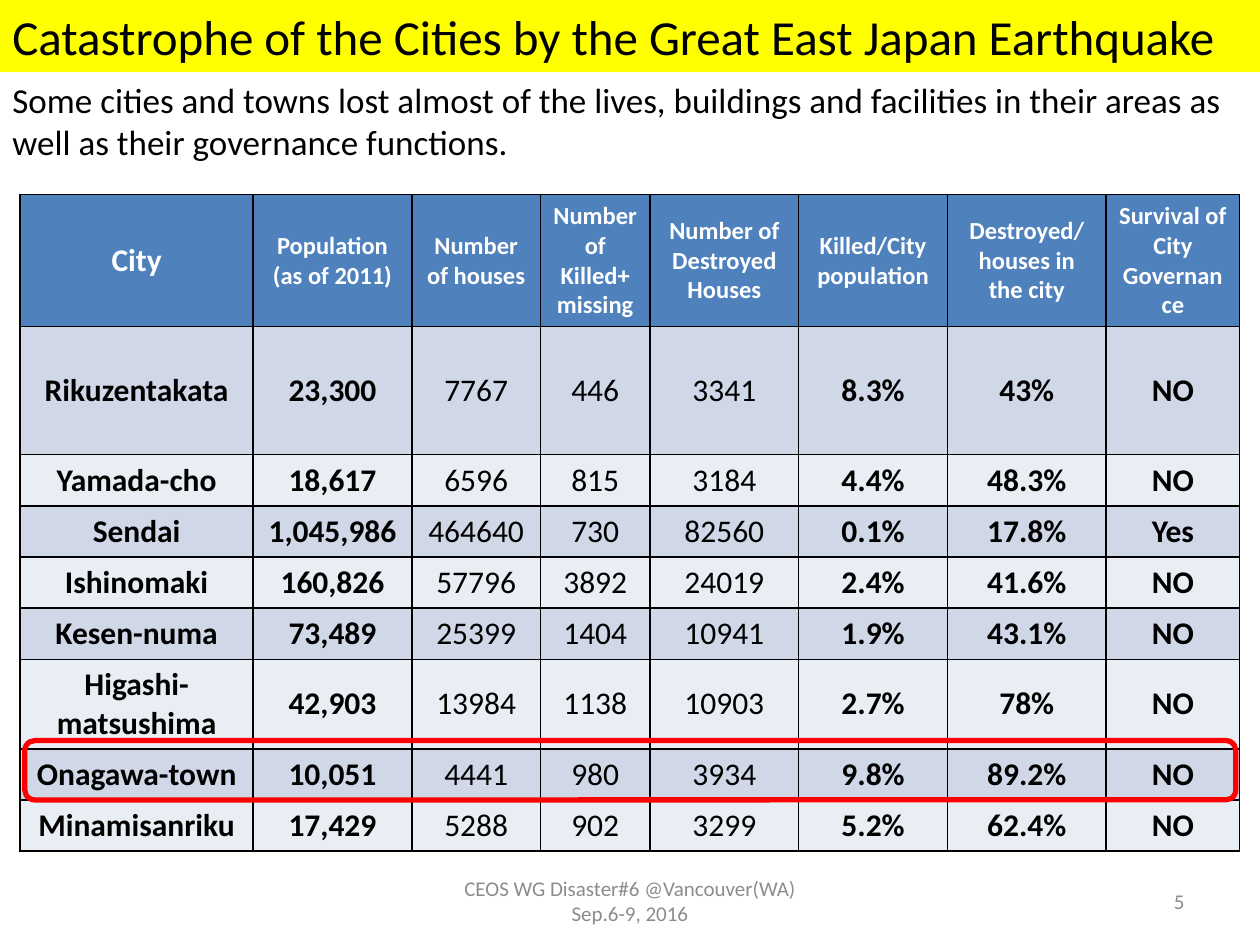
from lxml import etree
from pptx import Presentation
from pptx.dml.color import RGBColor
from pptx.enum.shapes import MSO_SHAPE
from pptx.enum.text import MSO_ANCHOR, PP_ALIGN
from pptx.oxml.ns import qn
from pptx.util import Pt

LEFT, CENTER, RIGHT = PP_ALIGN.LEFT, PP_ALIGN.CENTER, PP_ALIGN.RIGHT
TOP, MIDDLE = MSO_ANCHOR.TOP, MSO_ANCHOR.MIDDLE
RECTANGLE, ROUNDED = MSO_SHAPE.RECTANGLE, MSO_SHAPE.ROUNDED_RECTANGLE

BLACK = RGBColor(0x00, 0x00, 0x00)
WHITE = RGBColor(0xFF, 0xFF, 0xFF)
YELLOW = RGBColor(0xFF, 0xFF, 0x00)
RED = RGBColor(0xFF, 0x00, 0x00)
GRAY = RGBColor(0x8C, 0x8C, 0x8C)
HEADER_BLUE = RGBColor(0x4F, 0x81, 0xBD)
BANDS = (RGBColor(0xD0, 0xD8, 0xE8), RGBColor(0xE9, 0xED, 0xF4))
FONT = "Calibri"

HEADERS = (
    "City", "Population (as of 2011)", "Number of houses",
    "Number of Killed+missing", "Number of Destroyed Houses",
    "Killed/City population", "Destroyed/ houses in the city",
    "Survival of City Governance",
)
CITIES = (
    ("Rikuzentakata", "23,300", "7767", "446", "3341", "8.3%", "43%", "NO"),
    ("Yamada-cho", "18,617", "6596", "815", "3184", "4.4%", "48.3%", "NO"),
    ("Sendai", "1,045,986", "464640", "730", "82560", "0.1%", "17.8%", "Yes"),
    ("Ishinomaki", "160,826", "57796", "3892", "24019", "2.4%", "41.6%", "NO"),
    ("Kesen-numa", "73,489", "25399", "1404", "10941", "1.9%", "43.1%", "NO"),
    ("Higashi-matsushima", "42,903", "13984", "1138", "10903", "2.7%", "78%", "NO"),
    ("Onagawa-town", "10,051", "4441", "980", "3934", "9.8%", "89.2%", "NO"),
    ("Minamisanriku", "17,429", "5288", "902", "3299", "5.2%", "62.4%", "NO"),
)
PLAIN_COLUMNS = (2, 3, 4)
COLUMN_WIDTHS = (133.2, 90.7, 73.5, 62.6, 85, 85, 90.7, 76.3)
HEADER_HEIGHT, ROW_HEIGHT = 75.4, 29.25
TALL_ROWS = {"Rikuzentakata": 73.2, "Higashi-matsushima": 51.2}


def write_text(text_frame, text, size, color, align=LEFT, bold=False):
    text_frame.word_wrap = True
    text_frame.text = text
    paragraph = text_frame.paragraphs[0]
    paragraph.alignment = align
    font = paragraph.runs[0].font
    font.name, font.size, font.bold = FONT, Pt(size), bold
    font.color.rgb = color


def add_label(slide, box, text, size, color, align=LEFT, anchor=TOP):
    shape = slide.shapes.add_textbox(*map(Pt, box))
    write_text(shape.text_frame, text, size, color, align)
    shape.text_frame.vertical_anchor = anchor


def add_title(slide, box):
    banner = slide.shapes.add_shape(RECTANGLE, *map(Pt, box))
    banner.shadow.inherit = False
    banner.fill.solid()
    banner.fill.fore_color.rgb = YELLOW
    banner.line.fill.background()
    write_text(banner.text_frame,
               "Catastrophe of the Cities by the Great East Japan Earthquake",
               28, BLACK)
    banner.text_frame.vertical_anchor = TOP


def add_borders(cell):
    properties = cell._tc.get_or_add_tcPr()
    for index, side in enumerate(("a:lnL", "a:lnR", "a:lnT", "a:lnB")):
        line = etree.Element(qn(side), w=str(Pt(1)))
        fill = etree.SubElement(line, qn("a:solidFill"))
        etree.SubElement(fill, qn("a:srgbClr"), val=str(BLACK))
        properties.insert(index, line)


def add_city_table(slide, left, top):
    heights = [HEADER_HEIGHT] + [TALL_ROWS.get(city[0], ROW_HEIGHT) for city in CITIES]
    table = slide.shapes.add_table(
        len(heights), len(COLUMN_WIDTHS), Pt(left), Pt(top),
        Pt(sum(COLUMN_WIDTHS)), Pt(sum(heights))).table
    for column, width in zip(table.columns, COLUMN_WIDTHS):
        column.width = Pt(width)

    for row_index, values in enumerate((HEADERS,) + CITIES):
        table.rows[row_index].height = Pt(heights[row_index])
        is_header = row_index == 0
        for column_index, value in enumerate(values):
            cell = table.cell(row_index, column_index)
            cell.fill.solid()
            cell.fill.fore_color.rgb = (
                HEADER_BLUE if is_header else BANDS[(row_index - 1) % 2])
            cell.vertical_anchor = MIDDLE
            size = 14 if is_header and column_index > 0 else 18
            write_text(cell.text_frame, value, size,
                       WHITE if is_header else BLACK, CENTER,
                       is_header or column_index not in PLAIN_COLUMNS)
            add_borders(cell)


def add_highlight(slide, box):
    frame = slide.shapes.add_shape(ROUNDED, *map(Pt, box))
    frame.shadow.inherit = False
    frame.fill.background()
    frame.line.color.rgb = RED
    frame.line.width = Pt(3)


def add_footer(slide, top, height):
    add_label(slide, (246, top, 228, height),
              "CEOS WG Disaster#6 @Vancouver(WA) Sep.6-9, 2016",
              12, GRAY, CENTER, MIDDLE)
    add_label(slide, (516, top, 168, height), "5", 12, GRAY, RIGHT, MIDDLE)


def main():
    presentation = Presentation()
    presentation.slide_width, presentation.slide_height = Pt(720), Pt(540)
    slide = presentation.slides.add_slide(presentation.slide_layouts[6])

    # City statistics
    add_city_table(slide, 11.5, 111.3)
    # Title and introduction
    add_title(slide, (0, 0, 720, 41.2))
    add_label(slide, (0, 41.2, 720, 55.7),
              "Some cities and towns lost almost of the lives, buildings and "
              "facilities in their areas as well as their governance functions.",
              20, BLACK)
    # Frame around Onagawa-town
    add_highlight(slide, (14.2, 423.2, 692, 33.9))
    # Event and page number
    add_footer(slide, 500.5, 28.75)

    presentation.save("out.pptx")


if __name__ == "__main__":
    main()
